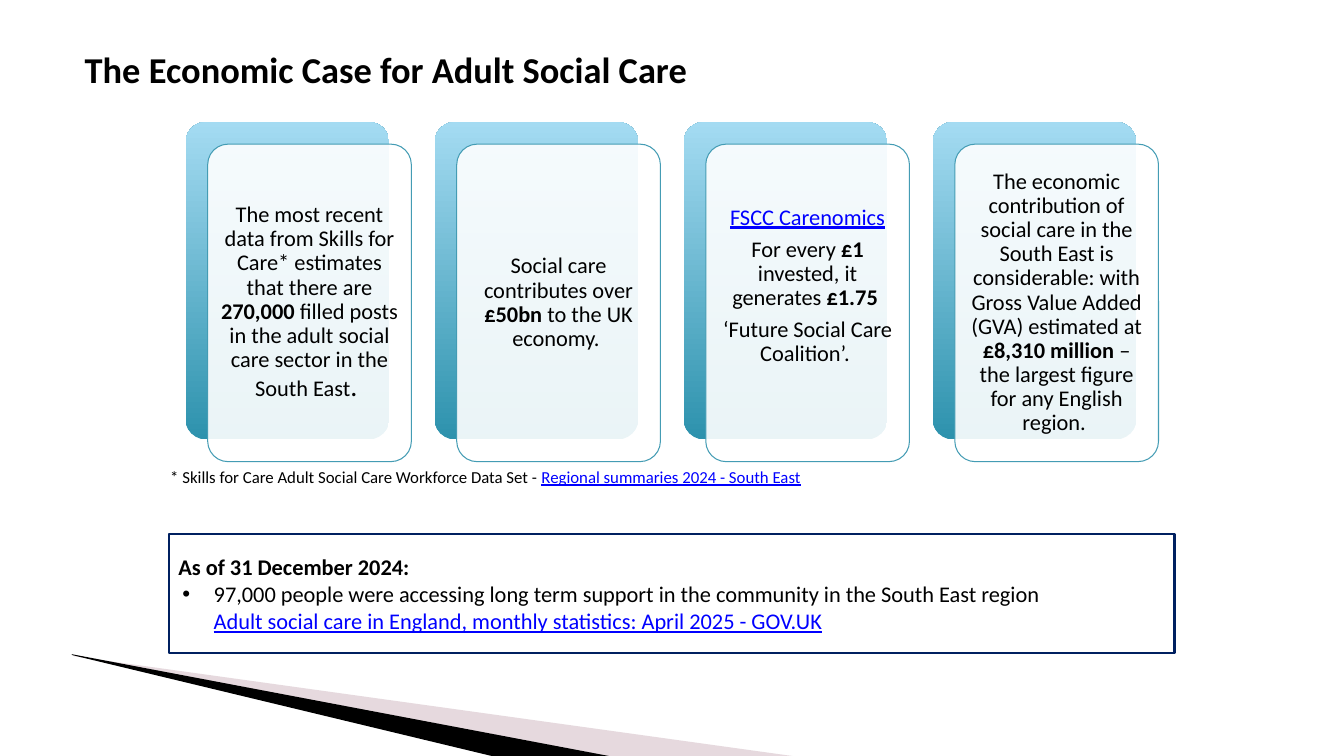
from lxml import etree
from pptx import Presentation
from pptx.dml.color import RGBColor
from pptx.enum.shapes import MSO_SHAPE
from pptx.enum.text import MSO_ANCHOR, PP_ALIGN
from pptx.oxml.ns import qn
from pptx.util import Pt

ROUND, RECT = MSO_SHAPE.ROUNDED_RECTANGLE, MSO_SHAPE.RECTANGLE
TOP, MIDDLE = MSO_ANCHOR.TOP, MSO_ANCHOR.MIDDLE
LEFT, CENTER = PP_ALIGN.LEFT, PP_ALIGN.CENTER
PX = 9144  # 100 px to the inch
COLORS = {
    "ink": "000000", "link": "0000FF", "white": "FFFFFF", "navy": "002060",
    "deep": "2D92AD", "pale": "A4DBF2", "edge": "449CB4", "mauve": "C1A1AD",
}
HUES = {name: RGBColor.from_string(code) for name, code in COLORS.items()}


def paint(shape, hue, alpha=100):
    """Flat fill, no line and no shadow; alpha in percent."""
    shape.shadow.inherit = False
    shape.line.fill.background()
    shape.fill.solid()
    shape.fill.fore_color.rgb = HUES[hue]
    if alpha < 100:
        tint = shape._element.spPr.find(qn("a:solidFill"))[0]
        etree.SubElement(tint, qn("a:alpha")).set("val", str(alpha * 1000))


def write(shape, lines, size, align=LEFT, anchor=TOP, pads=(5, 5, 5, 5)):
    """Each line is a list of (text, style); style is "", "b", "u" or "big"."""
    frame = shape.text_frame
    frame.word_wrap = True
    frame.vertical_anchor = anchor
    frame.margin_left, frame.margin_top, frame.margin_right, frame.margin_bottom = [
        pad * PX for pad in pads]
    for i, line in enumerate(lines):
        par = frame.paragraphs[0] if i == 0 else frame.add_paragraph()
        par.alignment = align
        for text, style in line:
            run = par.add_run()
            run.text = text
            font = run.font
            font.name = "Calibri"
            font.size = Pt(20 if style == "big" else size)
            font.bold = style == "b"
            font.underline = style == "u"
            font.color.rgb = HUES["link" if style == "u" else "ink"]
    return frame.paragraphs


deck = Presentation()
deck.slide_width, deck.slide_height = 1333 * PX, 750 * PX
slide = deck.slides.add_slide(deck.slide_layouts[6])
shapes = slide.shapes

# Corner wedges
wedges = [
    ([(73, 651), (793, 751), (608, 751), (73, 650)], "mauve", 40),
    ([(71, 649), (609, 751), (496, 752), (72, 650)], "ink", 100),
]
for points, hue, alpha in wedges:
    pen = shapes.build_freeform(*points[0], scale=PX)
    pen.add_line_segments(points[1:], close=True)
    paint(pen.convert_to_shape(), hue, alpha)

# Title
title = shapes.add_textbox(79 * PX, 42 * PX, 740 * PX, 54 * PX)
write(title, [[("The Economic Case for Adult Social Care", "b")]], 26)

# Four cards: the text lines and the bottom padding of each
cards = [
    ([[("The most recent data from Skills for Care* estimates that there are ", ""),
       ("270,000", "b"),
       (" filled posts in the adult social care sector in the South East", ""),
       (". ", "big")]], 7),
    ([[("Social care contributes over ", ""), ("£50bn ", "b"),
       ("to the UK economy. ", "")]], 7),
    ([[("FSCC Carenomics", "u")],
      [("For every ", ""), ("£1", "b"), (" invested, it generates ", ""),
       ("£1.75 ", "b")],
      [("‘Future Social Care Coalition’. ", "")]], 40),
    ([[("The economic contribution of social care in the South East is "
        "considerable: with Gross Value Added (GVA) estimated at ", ""),
       ("£8,310 million ", "b"),
       ("– the largest figure for any English region. ", "")]], 7),
]
WIDE, HIGH, STEP, SHIFT = 202, 315, 247, 22
for i, (lines, foot) in enumerate(cards):
    left = 184 + i * STEP
    back = shapes.add_shape(ROUND, left * PX, 121 * PX, WIDE * PX, HIGH * PX)
    back.adjustments[0] = 0.1
    back.shadow.inherit = False
    back.line.fill.background()
    back.fill.gradient()
    back.fill.gradient_angle = 90
    for stop, hue in zip(back.fill.gradient_stops, ("deep", "pale")):
        stop.color.rgb = HUES[hue]

    front = shapes.add_shape(
        ROUND, (left + SHIFT) * PX, (121 + SHIFT) * PX, WIDE * PX, HIGH * PX)
    front.adjustments[0] = 0.1
    paint(front, "white", 90)
    front.line.color.rgb = HUES["edge"]
    front.line.width = Pt(0.75)
    for par in write(front, lines, 16, CENTER, MIDDLE, (7, 7, 7, foot)):
        par.line_spacing = 0.9
        par.space_after = Pt(5.6)

# Footnote
note = shapes.add_textbox(159 * PX, 458 * PX, 1016 * PX, 30 * PX)
write(note, [[("* Skills for Care Adult Social Care Workforce Data Set - ", ""),
              ("Regional summaries 2024 - South East", "u")]], 12,
      pads=(10, 5, 10, 5))

# Framed facts
box = shapes.add_shape(RECT, 168 * PX, 530 * PX, 997 * PX, 118 * PX)
box.shadow.inherit = False
box.fill.background()
box.line.color.rgb = HUES["navy"]
box.line.width = Pt(1.5)
facts = write(box, [
    [("As of 31 December 2024:", "b")],
    [("97,000 people were accessing long term support in the community "
      "in the South East region", "")],
    [("Adult social care in England, monthly statistics: April 2025 - GOV.UK", "u")],
], 16, pads=(5, 19, 5, 5))
for par, margin, indent in zip(facts, (4, 39, 39), (0, -31, 0)):
    props = par._p.get_or_add_pPr()
    props.set("marL", str(margin * PX))
    props.set("indent", str(indent * PX))
    if indent:
        etree.SubElement(props, qn("a:buFont")).set("typeface", "Arial")
        etree.SubElement(props, qn("a:buChar")).set("char", "•")

deck.save("out.pptx")
